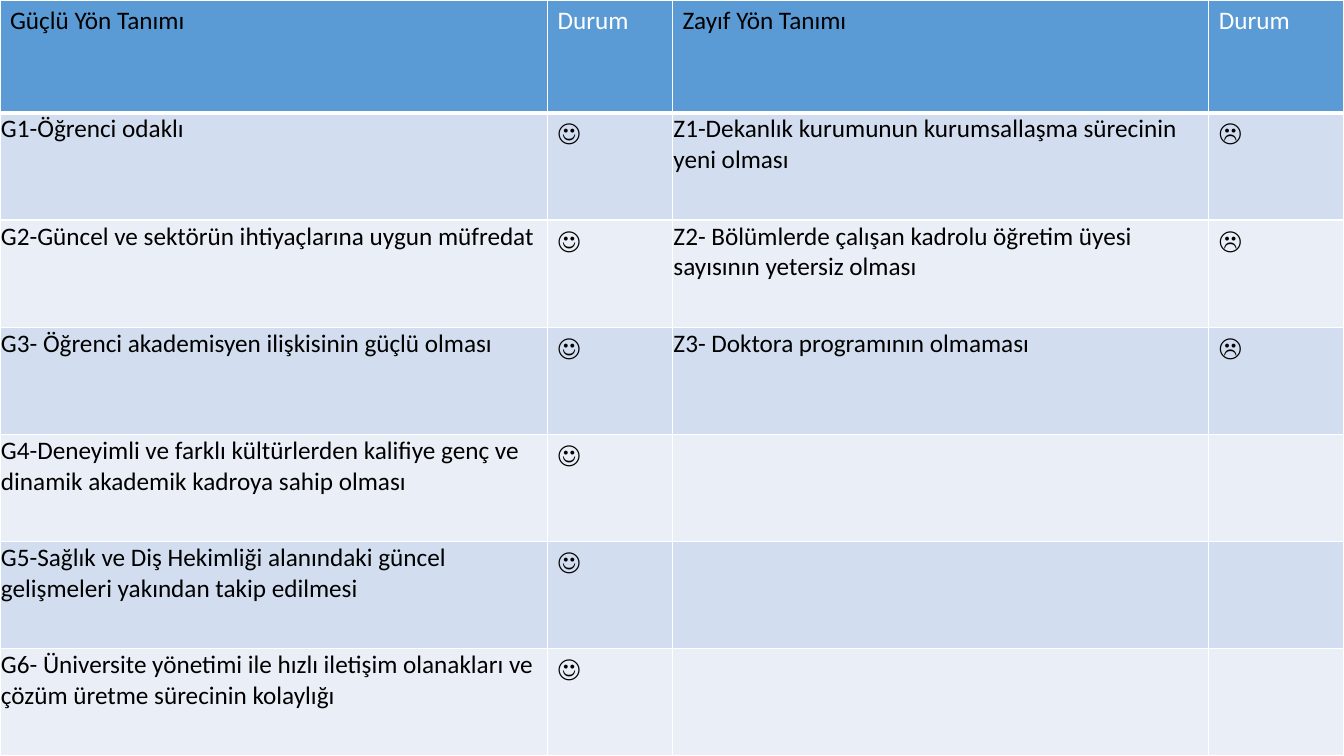
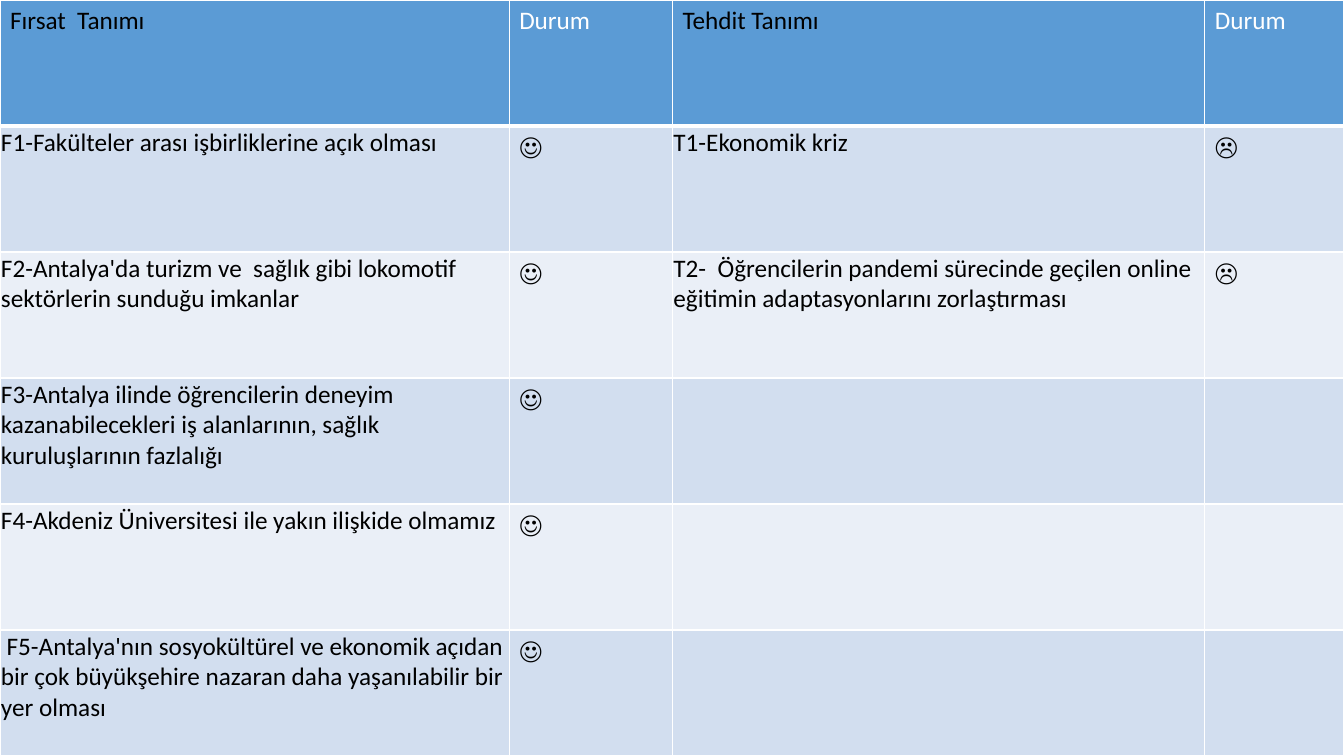
"""Build two SWOT table slides: strengths and weaknesses, opportunities and threats."""
from lxml import etree
from pptx import Presentation
from pptx.dml.color import RGBColor
from pptx.oxml.ns import qn
from pptx.util import Inches, Pt

WIDTH, HEIGHT = 13.33, 7.5
FONT = "Calibri"
BLACK, WHITE = "000000", "FFFFFF"
HEADER_FILL = "5B9BD5"
BAND_FILLS = ["EAEFF7", "D2DEEF"]
HAPPY, SAD = "☺", "☹"

TABLES = [
    {
        "headers": ["Güçlü Yön Tanımı", "Durum", "Zayıf Yön Tanımı", "Durum"],
        "columns": [5.43, 1.24, 5.32, 1.34],
        "header_height": 1.12,
        "positive": [
            "G1-Öğrenci odaklı",
            "G2-Güncel ve sektörün ihtiyaçlarına uygun müfredat",
            "G3- Öğrenci akademisyen ilişkisinin güçlü olması",
            "G4-Deneyimli ve farklı kültürlerden kalifiye genç ve dinamik akademik kadroya sahip olması",
            "G5-Sağlık ve Diş Hekimliği alanındaki güncel gelişmeleri yakından takip edilmesi",
            "G6- Üniversite yönetimi ile hızlı iletişim olanakları ve çözüm üretme sürecinin kolaylığı",
        ],
        "negative": [
            "Z1-Dekanlık kurumunun kurumsallaşma sürecinin yeni olması",
            "Z2- Bölümlerde çalışan kadrolu öğretim üyesi sayısının yetersiz olması",
            "Z3- Doktora programının olmaması",
        ],
    },
    {
        "headers": ["Fırsat  Tanımı", "Durum", "Tehdit Tanımı", "Durum"],
        "columns": [5.05, 1.62, 5.28, 1.38],
        "header_height": 1.25,
        "positive": [
            "F1-Fakülteler arası işbirliklerine açık olması",
            "F2-Antalya'da turizm ve  sağlık gibi lokomotif sektörlerin sunduğu imkanlar",
            "F3-Antalya ilinde öğrencilerin deneyim kazanabilecekleri iş alanlarının, sağlık kuruluşlarının fazlalığı",
            "F4-Akdeniz Üniversitesi ile yakın ilişkide olmamız",
            " F5-Antalya'nın sosyokültürel ve ekonomik açıdan bir çok büyükşehire nazaran daha yaşanılabilir bir yer olması",
        ],
        "negative": [
            "T1-Ekonomik kriz",
            "T2-  Öğrencilerin pandemi sürecinde geçilen online eğitimin adaptasyonlarını zorlaştırması",
        ],
    },
]


def color(value):
    return RGBColor.from_string(value)


def format_cell(cell, text, fill, text_color, bottom_width):
    properties = cell._tc.get_or_add_tcPr()
    for side, width in (("L", 1), ("R", 1), ("T", 1), ("B", bottom_width)):
        line = etree.SubElement(properties, qn(f"a:ln{side}"), w=str(Pt(width)))
        line_fill = etree.SubElement(line, qn("a:solidFill"))
        etree.SubElement(line_fill, qn("a:srgbClr"), val=WHITE)
    cell.fill.solid()
    cell.fill.fore_color.rgb = color(fill)
    cell.text_frame.text = text
    font = cell.text_frame.paragraphs[0].font
    font.size = Pt(18)
    for run in cell.text_frame.paragraphs[0].runs:
        run.font.name = FONT
        run.font.size = Pt(18)
        run.font.bold = False
        run.font.color.rgb = color(text_color)


presentation = Presentation()
presentation.slide_width = Inches(WIDTH)
presentation.slide_height = Inches(HEIGHT)
blank_layout = presentation.slide_layouts[6]

for content in TABLES:
    slide = presentation.slides.add_slide(blank_layout)
    positive, negative = content["positive"], content["negative"]
    row_count = len(positive) + 1
    table = slide.shapes.add_table(
        row_count, 4, Inches(0), Inches(0), Inches(WIDTH), Inches(HEIGHT)
    ).table

    for column, width in zip(table.columns, content["columns"]):
        column.width = Inches(width)
    body_height = (HEIGHT - content["header_height"]) / len(positive)
    for row in table.rows:
        row.height = Inches(body_height)
    table.rows[0].height = Inches(content["header_height"])

    for index, header in enumerate(content["headers"]):
        header_color = WHITE if index % 2 else BLACK
        format_cell(table.cell(0, index), header, HEADER_FILL, header_color, 3)

    for row_index in range(1, row_count):
        texts = [positive[row_index - 1], HAPPY, "", ""]
        if row_index <= len(negative):
            texts[2:] = [negative[row_index - 1], SAD]
        for index, text in enumerate(texts):
            cell = table.cell(row_index, index)
            format_cell(cell, text, BAND_FILLS[row_index % 2], BLACK, 1)
            if index % 2 == 0:
                cell.margin_left = cell.margin_right = cell.margin_top = Inches(0.01)
                cell.margin_bottom = Inches(0)

presentation.save("out.pptx")
